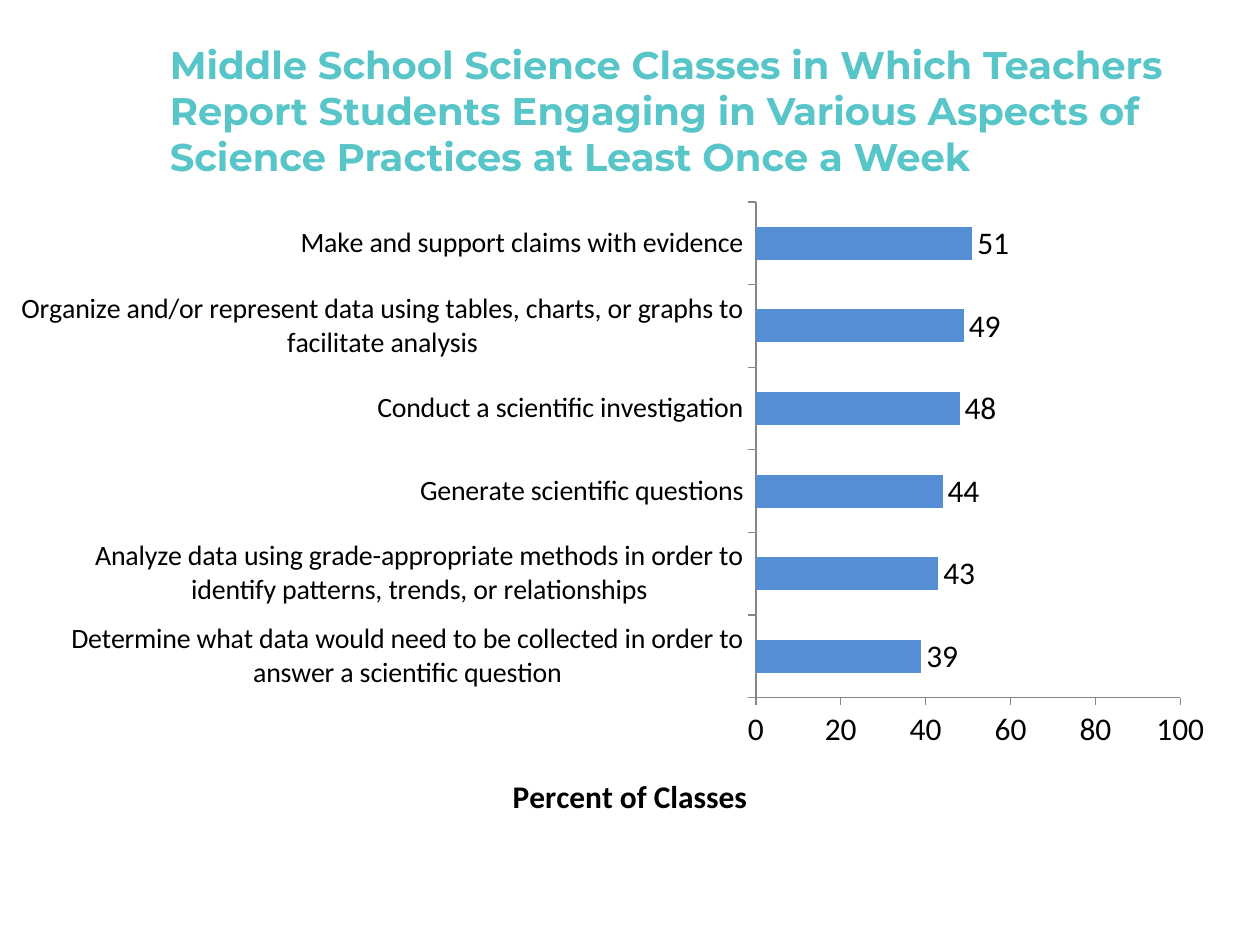
from lxml import etree
from pptx import Presentation
from pptx.chart.data import CategoryChartData
from pptx.dml.color import RGBColor
from pptx.enum import chart as ch, text as tx
from pptx.oxml.ns import qn
from pptx.util import Inches, Pt

COLORS = {"title": "58C5C9", "bar": "558ED5", "ink": "000000", "axis": "868686"}
TITLE = ("Middle School Science Classes in Which Teachers Report Students "
         "Engaging in Various Aspects of Science Practices at Least Once a Week")
PRACTICES = [
    ("Determine what data would need to be collected in order to answer a scientific question", 39),
    ("Analyze data using grade-appropriate methods in order to identify patterns, trends, or relationships", 43),
    ("Generate scientific questions", 44),
    ("Conduct a scientific investigation", 48),
    ("Organize and/or represent data using tables, charts, or graphs to facilitate analysis", 49),
    ("Make and support claims with evidence", 51),
]


def set_format(target, values):
    """Set each named attribute of the target."""
    for name, value in values.items():
        setattr(target, name, value)


def set_font(font, size, color, name="Calibri", bold=False):
    """Give a font its size, colour, face and weight."""
    set_format(font, {"size": Pt(size), "name": name, "bold": bold})
    font.color.rgb = RGBColor.from_string(COLORS[color])


def set_layout(parent, index, values):
    """Give a chart part a manual layout in fractions of the chart."""
    for old in parent.findall(qn("c:layout")):
        parent.remove(old)
    layout = etree.Element(qn("c:layout"))
    manual = etree.SubElement(layout, qn("c:manualLayout"))
    for tag, value in values.items():
        etree.SubElement(manual, qn(f"c:{tag}")).set("val", str(value))
    parent.insert(index, layout)


def add_title(slide, box):
    """Place the slide heading in the given box."""
    frame = slide.shapes.add_textbox(*box).text_frame
    set_format(frame, {"word_wrap": True, "vertical_anchor": tx.MSO_ANCHOR.MIDDLE})
    run = frame.paragraphs[0].add_run()
    run.text = TITLE
    set_font(run.font, 22, "title", "Montserrat", True)


def style_axis(axis, size):
    """Give an axis its ticks, line and label font."""
    set_format(axis, {"major_tick_mark": ch.XL_TICK_MARK.OUTSIDE,
                      "minor_tick_mark": ch.XL_TICK_MARK.NONE,
                      "has_major_gridlines": False})
    axis.format.line.width = Pt(0.75)
    axis.format.line.color.rgb = RGBColor.from_string(COLORS["axis"])
    set_font(axis.tick_labels.font, size, "ink")


def add_practices_chart(slide, box):
    """Place the bar chart of science practices in the given box."""
    data = CategoryChartData(number_format="General")
    data.categories = [practice for practice, _ in PRACTICES]
    data.add_series("Series 1", [percent for _, percent in PRACTICES])
    chart = slide.shapes.add_chart(ch.XL_CHART_TYPE.BAR_CLUSTERED, *box, data).chart
    set_format(chart, {"has_legend": False, "has_title": False})
    set_font(chart.font, 18, "ink")

    style_axis(chart.category_axis, 16)
    percent_axis = chart.value_axis
    style_axis(percent_axis, 18)
    set_format(percent_axis, {"minimum_scale": 0, "maximum_scale": 100, "major_unit": 20})
    axis_title = percent_axis.axis_title
    run = axis_title.text_frame.paragraphs[0].add_run()
    run.text = "Percent of Classes"
    set_font(run.font, 18, "ink", bold=True)
    set_layout(axis_title._element, 1, {"xMode": "edge", "yMode": "edge", "x": 0.4, "y": 0.89})

    plot = chart.plots[0]
    set_format(plot, {"gap_width": 150, "vary_by_categories": False, "has_data_labels": True})
    set_format(plot.data_labels, {"show_value": True,
                                  "position": ch.XL_LABEL_POSITION.OUTSIDE_END})
    set_font(plot.data_labels.font, 18, "ink")
    fill = plot.series[0].format.fill
    fill.solid()
    fill.fore_color.rgb = RGBColor.from_string(COLORS["bar"])
    set_layout(chart._chartSpace.chart.plotArea, 0,
               {"layoutTarget": "inner", "xMode": "edge", "yMode": "edge",
                "x": 0.607, "y": 0.02, "w": 0.353, "h": 0.761})


def main():
    """Build the slide and save it."""
    deck = Presentation()
    set_format(deck, {"slide_width": Inches(10), "slide_height": Inches(7.5)})
    slide = deck.slides.add_slide(deck.slide_layouts[6])
    add_practices_chart(slide, [Inches(n) for n in (0.17, 1.5, 9.58, 5.17)])
    add_title(slide, [Inches(n) for n in (1.25, 0.25, 8.25, 1.25)])
    deck.save("out.pptx")


if __name__ == "__main__":
    main()
